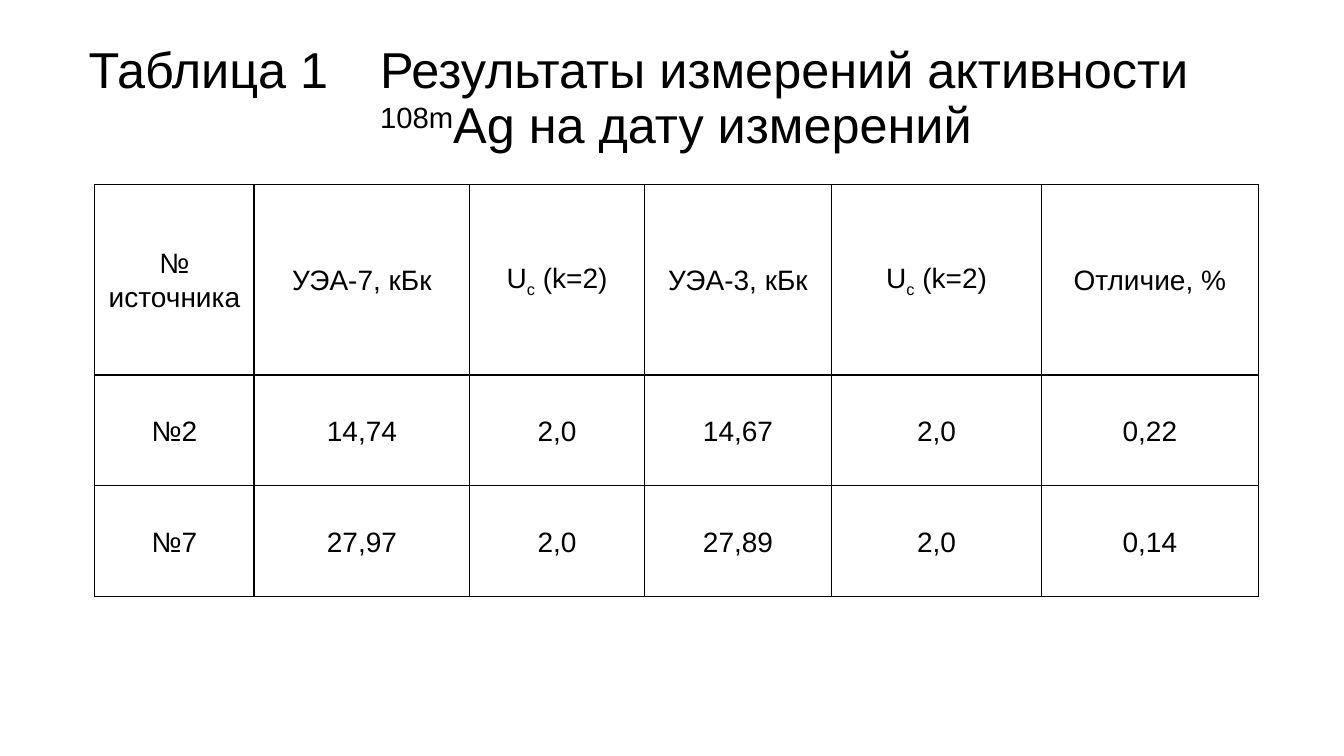
import pptx
import pptx.util
import pptx.dml.color
import pptx.enum.text
from lxml import etree
from pptx.util import Inches, Pt

# Content: a run is (text, baseline shift in percent)
TITLE = [("Таблица 1\tРезультаты измерений активности ", 0), ("108m", 30),
         ("Ag на дату измерений", 0)]
UNCERTAINTY = [("U", 0), ("c", -25), (" (k=2)", 0)]
ROWS = [
    ["№ источника", "УЭА-7, кБк", UNCERTAINTY, "УЭА-3, кБк", UNCERTAINTY, "Отличие, %"],
    ["№2", "14,74", "2,0", "14,67", "2,0", "0,22"],
    ["№7", "27,97", "2,0", "27,89", "2,0", "0,14"],
]

# Theme and grid, in inches and points
THEME = {"font": "Arial", "ink": "000000", "title": 36, "body": 20, "border": 1}
SLIDE_W, SLIDE_H = 13.33, 7.5
TITLE_BOX = (0.71, 0.34, 12, 1.93)
TITLE_TOP, LABEL_LEFT, TITLE_LEFT = 0.11, 0.17, 3.06
TABLE_LEFT, TABLE_TOP = 0.94, 1.83
COL_WIDTHS = [1.58, 2.14, 1.73, 1.86, 2.08, 2.15]
ROW_HEIGHTS = [1.89, 1.1, 1.1]
CELL_MARGIN = 0.04
INK = pptx.dml.color.RGBColor.from_string(THEME["ink"])
ALIGN = pptx.enum.text.PP_ALIGN
ANCHOR = pptx.enum.text.MSO_ANCHOR
A = "http://schemas.openxmlformats.org/drawingml/2006/main"


def write(p, runs, size, align, spacing):
    p.alignment, p.line_spacing = align, spacing
    p.font.name, p.font.size, p.font.color.rgb = THEME["font"], Pt(size), INK
    for text, shift in runs:
        r = p.add_run()
        r.text = text
        if shift:
            r.font._element.set("baseline", str(shift * 1000))


def add_borders(cell):
    tcPr = cell._tc.get_or_add_tcPr()
    for i, side in enumerate(("lnL", "lnR", "lnT", "lnB")):
        ln = etree.Element(f"{{{A}}}{side}", w=str(Pt(THEME["border"])))
        fill = etree.SubElement(ln, f"{{{A}}}solidFill")
        etree.SubElement(fill, f"{{{A}}}srgbClr", val=THEME["ink"])
        tcPr.insert(i, ln)


prs = pptx.Presentation()
prs.slide_width, prs.slide_height = Inches(SLIDE_W), Inches(SLIDE_H)
s = prs.slides.add_slide(prs.slide_layouts[6])

# Title: the label hangs to the left of the wrapped heading
tf = s.shapes.add_textbox(*map(Inches, TITLE_BOX)).text_frame
tf.word_wrap = True
tf.vertical_anchor = ANCHOR.TOP
tf.margin_left = tf.margin_right = tf.margin_bottom = 0
tf.margin_top = Inches(TITLE_TOP)
p = tf.paragraphs[0]
write(p, TITLE, THEME["title"], ALIGN.LEFT, 0.9)
pPr = p._p.get_or_add_pPr()
pPr.set("marL", str(Inches(TITLE_LEFT)))
pPr.set("indent", str(Inches(LABEL_LEFT - TITLE_LEFT)))

# Table of measurements
table = s.shapes.add_table(
    len(ROWS), len(COL_WIDTHS), Inches(TABLE_LEFT), Inches(TABLE_TOP),
    Inches(sum(COL_WIDTHS)), Inches(sum(ROW_HEIGHTS))).table
table.first_row = table.horz_banding = False
for col, width in zip(table.columns, COL_WIDTHS):
    col.width = Inches(width)
for row, height, values in zip(table.rows, ROW_HEIGHTS, ROWS):
    row.height = Inches(height)
    for cell, value in zip(row.cells, values):
        cell.fill.background()
        cell.vertical_anchor = ANCHOR.MIDDLE
        cell.margin_left = cell.margin_right = Inches(CELL_MARGIN)
        cell.margin_top = cell.margin_bottom = Inches(CELL_MARGIN)
        add_borders(cell)
        runs = [(value, 0)] if isinstance(value, str) else value
        write(cell.text_frame.paragraphs[0], runs, THEME["body"], ALIGN.CENTER, 1.07)

prs.save("out.pptx")
